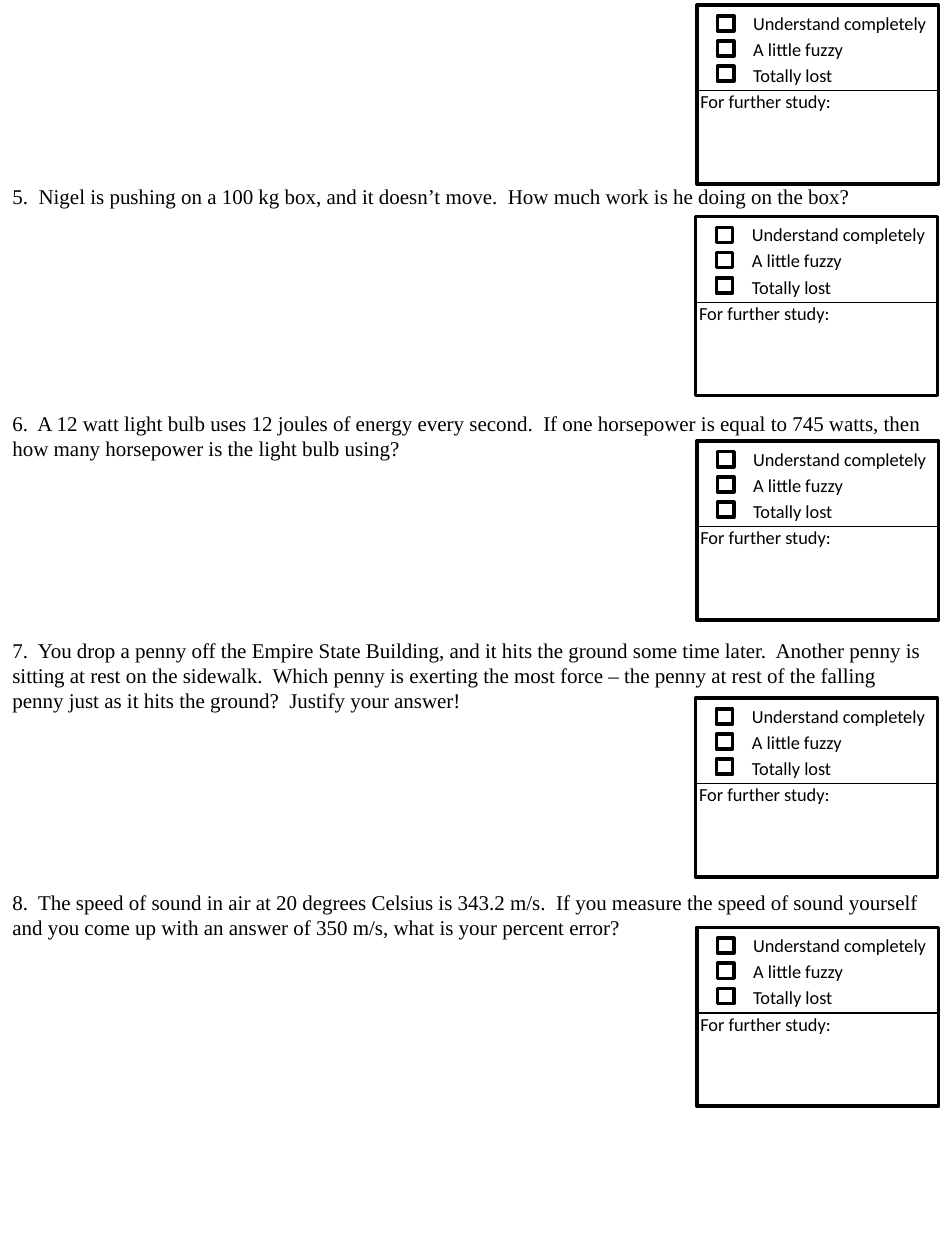
from pptx import Presentation
from pptx import util as u
from pptx.dml.color import RGBColor
from pptx.enum import shapes, text
from pptx.oxml import xmlchemy as xml

BLACK = RGBColor(0, 0, 0)
SERIF = dict(name="Times New Roman", size=u.Pt(12))
SANS = dict(name="Calibri", size=u.Pt(10.5))

LINE = 14.4  # line height of the questions, in points
# Each question with the number of lines left free above it
QUESTIONS = [
    (7, "5.  Nigel is pushing on a 100 kg box, and it doesn’t move.  "
        "How much work is he doing on the box?"),
    (8, "6.  A 12 watt light bulb uses 12 joules of energy every second.  If one "
        "horsepower is equal to 745 watts, then how many horsepower is the light "
        "bulb using?"),
    (7, "7.  You drop a penny off the Empire State Building, and it hits the ground "
        "some time later.  Another penny is sitting at rest on the sidewalk.  Which "
        "penny is exerting the most force – the penny at rest of the falling penny "
        "just as it hits the ground?  Justify your answer!"),
    (7, "8.  The speed of sound in air at 20 degrees Celsius is 343.2 m/s.  If you "
        "measure the speed of sound yourself and you come up with an answer of "
        "350 m/s, what is your percent error?"),
]
LEVELS = ["Understand completely", "A little fuzzy", "Totally lost"]
STUDY = "For further study:"
CARDS = [(5.53, 0.04), (5.52, 1.72), (5.53, 3.5), (5.52, 5.54), (5.53, 7.36)]
CARD_W, CARD_H = 1.92, 1.42


def inches(*vals):
    return [u.Inches(v) for v in vals]


def add_text(parent, box, lines, font, wrap=True):
    frame = parent.add_textbox(*inches(*box)).text_frame
    frame.word_wrap = wrap
    frame.auto_size = text.MSO_AUTO_SIZE.SHAPE_TO_FIT_TEXT
    for i, line in enumerate(lines):
        para = frame.paragraphs[0] if i == 0 else frame.add_paragraph()
        run = para.add_run()
        run.text = line
        for key, val in font.items():
            setattr(run.font, key, val)
        run.font.color.rgb = BLACK
    return frame


def add_box(parent, box):
    rect = parent.add_shape(shapes.MSO_SHAPE.RECTANGLE, *inches(*box))
    rect.shadow.inherit = False
    rect.fill.background()
    rect.line.color.rgb = BLACK
    rect.line.width = u.Pt(2)


def add_rule(parent, x, y, width):
    rule = parent.add_connector(shapes.MSO_CONNECTOR.STRAIGHT,
                                *inches(x, y, x + width, y))
    rule.line.color.rgb = BLACK
    rule.line.width = u.Pt(0.75)
    props = rule._element.spPr
    props.append(xml.OxmlElement("a:effectLst"))


def add_card(slide, x, y):
    """Draw one self-rating card with its top left corner at x, y."""
    group = slide.shapes.add_group_shape().shapes
    add_box(group, (x, y, CARD_W, CARD_H))
    levels = add_text(group, (x + 0.35, y - 0.03, 1.67, 0.72), LEVELS, SANS)
    for para in levels.paragraphs:
        para.line_spacing = u.Pt(15)
    add_rule(group, x, y + 0.68, CARD_W)
    add_text(group, (x - 0.07, y + 0.63, 1.26, 0.28), [STUDY], SANS, wrap=False)
    for i in range(len(LEVELS)):
        add_box(group, (x + 0.165, y + 0.085 + 0.2 * i, 0.13, 0.12))


def add_questions(slide):
    gaps, lines = zip(*QUESTIONS)
    frame = add_text(slide.shapes, (0, 0.01, 7.5, 8.99), lines, SERIF)
    frame.margin_top = u.Inches(0.05) + u.Pt(gaps[0] * LINE)
    for i, para in enumerate(frame.paragraphs):
        para.line_spacing = u.Pt(LINE)
        para.space_before = u.Pt(gaps[i] * LINE if i else 0)


def main():
    deck = Presentation()
    deck.slide_width, deck.slide_height = inches(7.5, 10)
    slide = deck.slides.add_slide(deck.slide_layouts[6])
    add_questions(slide)
    for x, y in CARDS:
        add_card(slide, x, y)
    deck.save("out.pptx")


if __name__ == "__main__":
    main()
